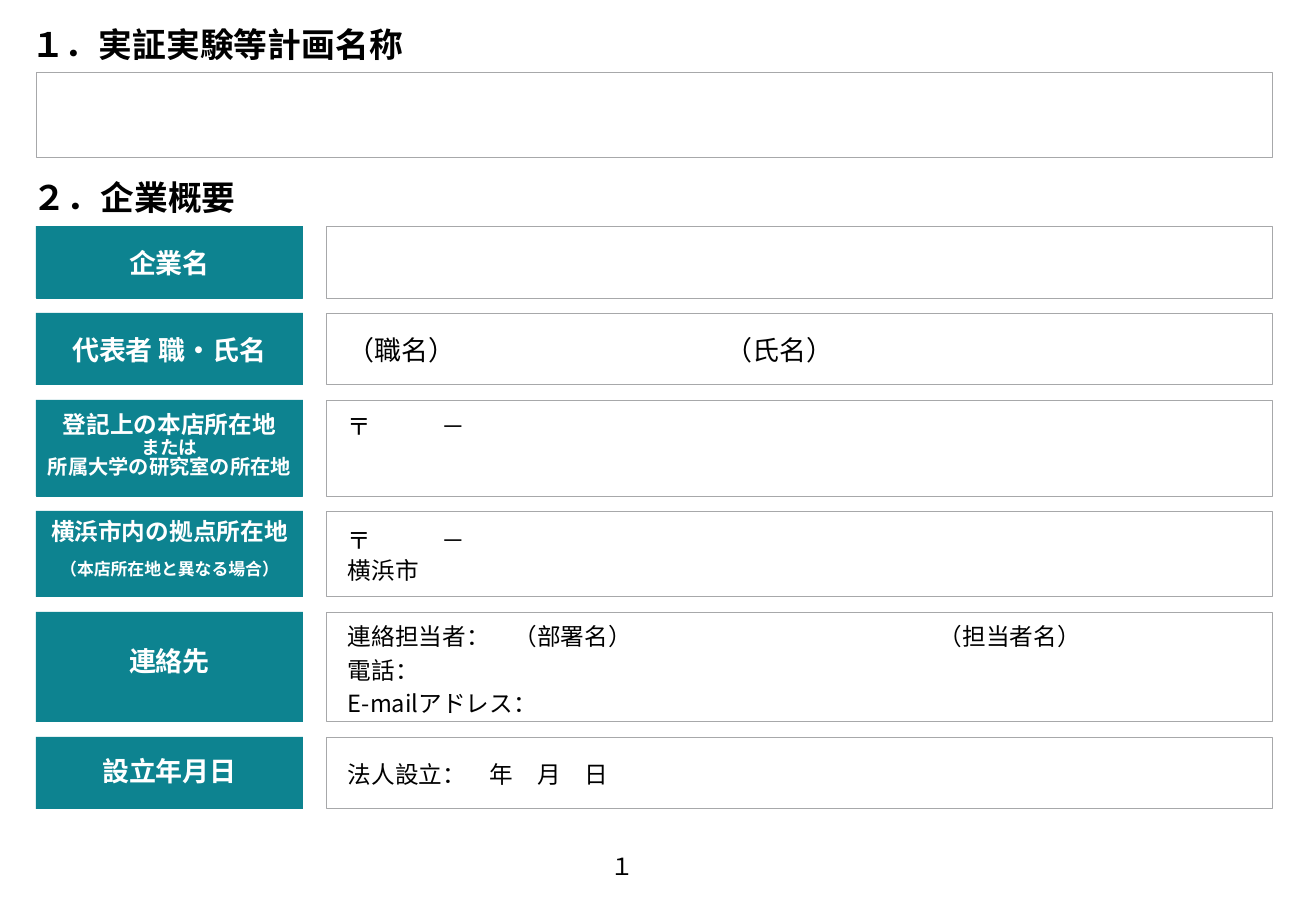
from lxml import etree
from pptx import Presentation
from pptx import util as u
from pptx.dml.color import RGBColor
from pptx.enum import shapes, text
from pptx.oxml import ns

FONT = "Noto Sans CJK JP"
TEAL = RGBColor(0x0D, 0x83, 0x90)
GRAY = RGBColor(0xA7, 0xA8, 0xAA)
WHITE = RGBColor(0xFF, 0xFF, 0xFF)
BLACK = RGBColor(0, 0, 0)
TOP, MIDDLE = text.MSO_ANCHOR.TOP, text.MSO_ANCHOR.MIDDLE
LEFT, CENTER = text.PP_ALIGN.LEFT, text.PP_ALIGN.CENTER

PLAN_HEADING = "１．実証実験等計画名称"
COMPANY_HEADING = "２．企業概要"
PAGE_NUMBER = "１"

ROWS = [
    dict(height=72, label=[("企業名", 16)], label_spacing=1.06),
    dict(height=72, label=[("代表者 職・氏名", 16)], label_spacing=1.06,
         field=["（職名）\t（氏名）"], size=16, tab=378),
    dict(height=96, label=[("登記上の本店所在地", 14), ("または", 11), ("所属大学の研究室の所在地", 12)],
         label_spacing=u.Pt(12), field=["〒\t－"], tab=94, anchor=TOP),
    dict(height=86, label=[("横浜市内の拠点所在地", 14), ("（本店所在地と異なる場合）", 10)],
         label_spacing=u.Pt(10), label_gap=10, field=["〒\t－", "横浜市"], tab=94),
    dict(height=110, label=[("連絡先", 16)], label_spacing=u.Pt(12),
         field=["連絡担当者：　（部署名）\t（担当者名）", "電話：", "E-mailアドレス："],
         tab=591, field_spacing=u.Pt(20)),
    dict(height=72, label=[("設立年月日", 16)], label_spacing=u.Pt(16),
         field=["法人設立：　年　月　日"]),
]

SCALE = 7526
MARGIN, LABEL_WIDTH = 36, 267
FIELD_LEFT, FIELD_WIDTH = 326, 947
FIRST_ROW_TOP, ROW_GAP = 226, 15
INSET, FIELD_INSET = 10, 22


def px(*lengths):
    return [length * SCALE for length in lengths]


def write(frame, lines, color, bold=False, align=LEFT, spacing=None, gap=0, tab=None):
    for index, (line, size) in enumerate(lines):
        paragraph = frame.paragraphs[0] if index == 0 else frame.add_paragraph()
        paragraph.text = line
        paragraph.alignment = align
        if spacing:
            paragraph.line_spacing = spacing
        if index and gap:
            paragraph.space_before = u.Pt(gap)
        if "\t" in line:
            properties = paragraph._p.get_or_add_pPr()
            tabs = etree.SubElement(properties, ns.qn("a:tabLst"))
            etree.SubElement(tabs, ns.qn("a:tab"), pos=str(tab * SCALE), algn="l")
        font = paragraph.font
        font.size, font.bold, font.name = u.Pt(size), bold, FONT
        font.color.rgb = color
        etree.SubElement(font._element, ns.qn("a:ea"), typeface=FONT)


def add_box(slide, position, fill, line, left_inset=INSET, anchor=MIDDLE):
    shape = slide.shapes.add_shape(shapes.MSO_SHAPE.RECTANGLE, *px(*position))
    shape.shadow.inherit = False
    shape.fill.solid()
    shape.fill.fore_color.rgb = fill
    shape.line.color.rgb = line
    shape.line.width = u.Pt(0.5)
    frame = shape.text_frame
    frame.margin_left, frame.margin_right, frame.margin_top, frame.margin_bottom = px(
        left_inset, INSET, INSET, INSET)
    frame.vertical_anchor = anchor
    return frame


def write_heading(shape, heading, position):
    shape.left, shape.top, shape.width, shape.height = px(*position)
    frame = shape.text_frame
    frame.word_wrap = True
    frame.auto_size = text.MSO_AUTO_SIZE.NONE
    frame.vertical_anchor = MIDDLE
    write(frame, [(heading, 20)], BLACK, bold=True)


def add_row(slide, row, top):
    label = add_box(slide, (MARGIN, top, LABEL_WIDTH, row["height"]), TEAL, TEAL)
    write(label, row["label"], WHITE, True, CENTER, row["label_spacing"], row.get("label_gap", 0))
    field = add_box(slide, (FIELD_LEFT, top, FIELD_WIDTH, row["height"]), WHITE, GRAY,
                    FIELD_INSET, row.get("anchor", MIDDLE))
    lines = [(line, row.get("size", 14)) for line in row.get("field", [])]
    write(field, lines, BLACK, spacing=row.get("field_spacing", 1.06), tab=row.get("tab"))


def main():
    presentation = Presentation()
    presentation.slide_width, presentation.slide_height = px(1316, 911)
    slide = presentation.slides.add_slide(presentation.slide_layouts[5])

    write_heading(slide.shapes.title, PLAN_HEADING, (19, 17, 1205, 55))
    add_box(slide, (MARGIN, 72, 1236, 86), WHITE, GRAY)
    company_position = (21, 170, 1205, 55)
    write_heading(slide.shapes.add_textbox(*px(*company_position)), COMPANY_HEADING, company_position)

    top = FIRST_ROW_TOP
    for row in ROWS:
        add_row(slide, row, top)
        top += row["height"] + ROW_GAP

    frame = slide.shapes.add_textbox(*px(611, 852, 24, 29)).text_frame
    frame.margin_left = frame.margin_right = frame.margin_top = frame.margin_bottom = 0
    frame.word_wrap = False
    write(frame, [(PAGE_NUMBER, 14)], BLACK)

    presentation.save("out.pptx")


if __name__ == "__main__":
    main()
